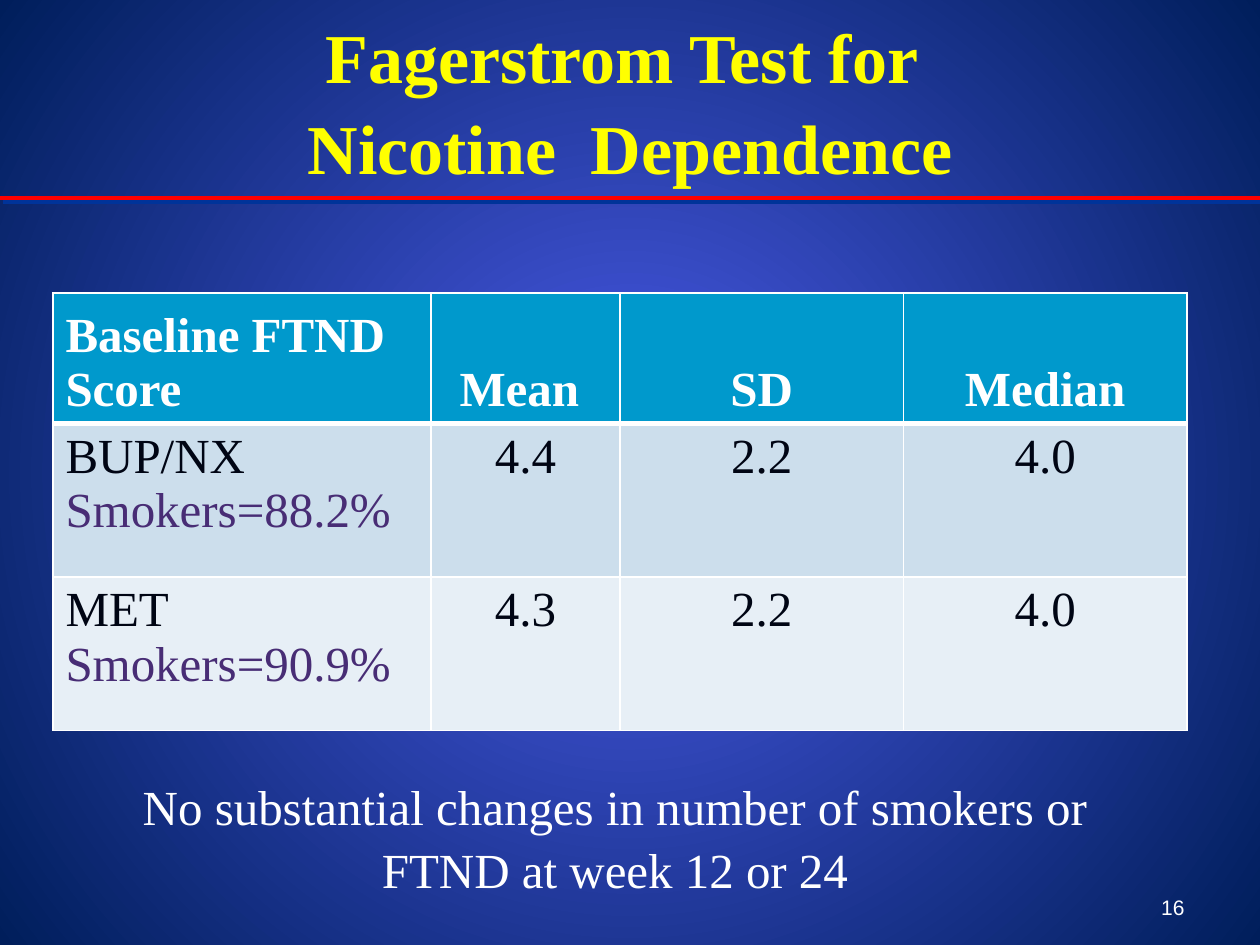
"""Build the slide on the Fagerstrom test scores."""
from dataclasses import dataclass

from lxml.etree import SubElement as Sub
from pptx import Presentation
from pptx.dml.color import RGBColor as Rgb
from pptx.enum.shapes import MSO_CONNECTOR as Link
from pptx.enum.text import MSO_ANCHOR as Anchor, PP_ALIGN as Align
from pptx.oxml.ns import qn
from pptx.util import Inches, Pt

HUES = {
    "glow": "4A5AE9", "edge": "001E5B", "title": "FFFF00", "rule": "FF0000",
    "shade": "003399", "white": "FFFFFF", "ink": "000514", "plum": "482D75",
    "head": "0099CC", "dark": "CCDEEC", "light": "E7EFF6",
}
WIDE, HIGH = 10, 7.5
SERIF = "Times New Roman"
COLS = (3, 1.5, 2.25, 2.25)


@dataclass
class Box:
    """Hold a place as shares of the slide's size."""
    left: float
    top: float
    width: float
    height: float

    def spot(self) -> tuple:
        """Give left, top, width and height as lengths."""
        return (Inches(self.left * WIDE), Inches(self.top * HIGH),
                Inches(self.width * WIDE), Inches(self.height * HIGH))


@dataclass
class Row:
    """Hold one row of the table and its look."""
    cells: tuple
    height: float
    fill: str
    hues: tuple
    bold: bool = False
    top: float = 1
    base: float = 1
    anchor: Anchor = Anchor.TOP


ROWS = (
    Row((("Baseline FTND Score",), ("Mean ",), ("SD",), ("Median",)), 0.95, "head",
        ("white",), bold=True, base=3, anchor=Anchor.BOTTOM),
    Row((("BUP/NX", "Smokers=88.2%"), ("4.4",), ("2.2",), ("4.0",)), 1.22, "dark",
        ("ink", "plum"), top=3),
    Row((("MET", "Smokers=90.9%"), ("4.3",), ("2.2",), ("4.0",)), 1.22, "light",
        ("ink", "plum")),
)


def tint(name: str) -> Rgb:
    """Look up a colour by name."""
    return Rgb.from_string(HUES[name])


def write(frame, lines: tuple, *, size: float = 28, font: str = SERIF,
          hues: tuple = ("white",), bold: bool = False, align: Align = Align.CENTER,
          anchor: Anchor = Anchor.TOP, gap: float = 1) -> None:
    """Fill a text frame with lines, one colour to each line."""
    frame.word_wrap = True
    frame.vertical_anchor = anchor
    para = frame.paragraphs[0]
    para.alignment, para.line_spacing = align, gap
    for i, line in enumerate(lines):
        if i:
            para.add_line_break()
        run = para.add_run()
        run.text = line
        face = run.font
        face.size, face.name, face.bold = Pt(size), font, bold
        face.color.rgb = tint(hues[min(i, len(hues) - 1)])


def paint(slide) -> None:
    """Give the slide a round glow."""
    fill = slide.background.fill
    fill.gradient()
    for stop, name in zip(fill.gradient_stops, ("glow", "edge")):
        stop.color.rgb = tint(name)
    grad = next(slide.element.iter(qn("a:gradFill")))
    grad.remove(grad.find(qn("a:lin")))
    ring = Sub(grad, qn("a:path"), path="circle")
    Sub(ring, qn("a:fillToRect"), l="50000", t="50000", r="50000", b="50000")


def rule(slide, share: float) -> None:
    """Draw the red line with its shadow."""
    y = Inches(share * HIGH)
    line = slide.shapes.add_connector(Link.STRAIGHT, 0, y, Inches(WIDE), y)
    line.line.color.rgb, line.line.width = tint("rule"), Pt(2.25)
    fx = Sub(line.element.spPr, qn("a:effectLst"))
    cast = Sub(fx, qn("a:outerShdw"), dist=str(Pt(2.8)), dir="2700000")
    Sub(cast, qn("a:srgbClr"), val=HUES["shade"])


def frame(cell, row: Row) -> None:
    """Draw white borders round a cell."""
    props = cell._tc.get_or_add_tcPr()
    sides = {"lnL": 1, "lnR": 1, "lnT": row.top, "lnB": row.base}
    for i, (side, width) in enumerate(sides.items()):
        edge = Sub(props, qn(f"a:{side}"), w=str(Pt(width)))
        Sub(Sub(edge, qn("a:solidFill")), qn("a:srgbClr"), val=HUES["white"])
        props.insert(i, edge)


def grid(slide, box: Box) -> None:
    """Build the table of scores."""
    table = slide.shapes.add_table(len(ROWS), len(COLS), *box.spot()).table
    for col, width in zip(table.columns, COLS):
        col.width = Inches(width)
    for r, row in enumerate(ROWS):
        table.rows[r].height = Inches(row.height)
        for c, lines in enumerate(row.cells):
            cell = table.cell(r, c)
            cell.fill.solid()
            cell.fill.fore_color.rgb = tint(row.fill)
            write(cell.text_frame, lines, hues=row.hues, bold=row.bold,
                  align=Align.CENTER if c else Align.LEFT)
            cell.vertical_anchor = row.anchor
            frame(cell, row)


def note(slide, box: Box, text: str, **form) -> None:
    """Add a text box."""
    write(slide.shapes.add_textbox(*box.spot()).text_frame, (text,), **form)


def main() -> None:
    """Build and save the slide."""
    deck = Presentation()
    deck.slide_width, deck.slide_height = Inches(WIDE), Inches(HIGH)
    slide = deck.slides.add_slide(deck.slide_layouts[5])
    paint(slide)
    title = slide.shapes.title
    title.left, title.top, title.width, title.height = Box(0, 0, 1, 0.207).spot()
    write(title.text_frame, ("Fagerstrom Test for ", "Nicotine  Dependence"), size=40,
          hues=("title",), bold=True, anchor=Anchor.MIDDLE, gap=1.08)
    note(slide, Box(0.717, 0.91, 0.233, 0.07), "16", size=12, font="Arial",
         align=Align.RIGHT, anchor=Anchor.BOTTOM)
    rule(slide, 0.21)
    grid(slide, Box(0.042, 0.31, 0.9, 0.45))
    note(slide, Box(0.067, 0.81, 0.842, 0.14),
         "No substantial changes in number of smokers or FTND at week 12 or 24", gap=1.08)
    deck.save("out.pptx")


if __name__ == "__main__":
    main()
